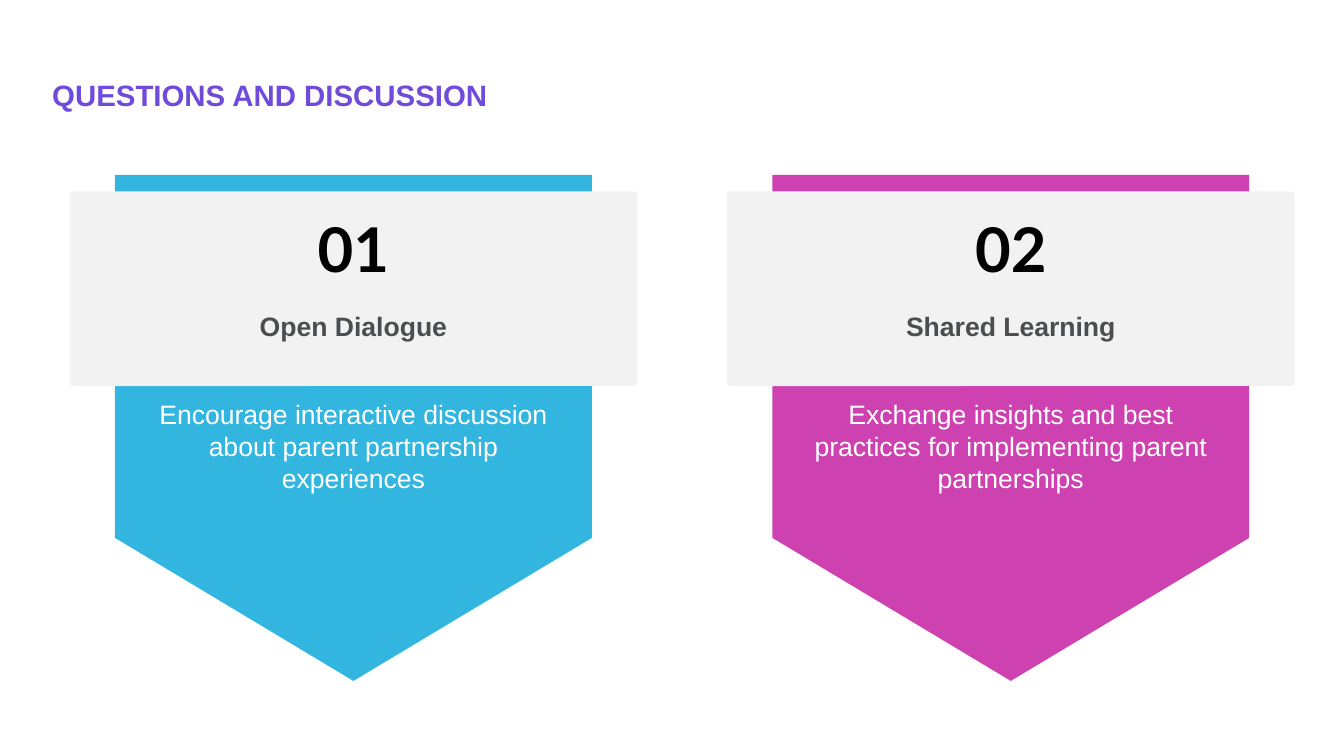
from pptx import Presentation
from pptx.dml.color import RGBColor
from pptx.enum.shapes import MSO_SHAPE
from pptx.enum.text import MSO_ANCHOR, PP_ALIGN
from pptx.util import Inches, Pt

PENTAGON = MSO_SHAPE.PENTAGON
ROUNDED = MSO_SHAPE.ROUNDED_RECTANGLE
TOP, BOTTOM = MSO_ANCHOR.TOP, MSO_ANCHOR.BOTTOM
LEFT, CENTER = PP_ALIGN.LEFT, PP_ALIGN.CENTER

BANNER_LEFT, BANNER_TOP, BANNER_WIDTH = 0.69, 1.73, 5.63
BANNER_PITCH = 6.52
BANNERS = [
    ("01", "Open Dialogue",
     "Encourage interactive discussion about parent partnership experiences",
     "32B5DF"),
    ("02", "Shared Learning",
     "Exchange insights and best practices for implementing parent partnerships",
     "CD41B0"),
]


def color(hex_value):
    """Return the colour for a hex string."""
    return RGBColor.from_string(hex_value)


def add_filled(slide, kind, box, fill, adjustment):
    """Add a flat preset shape without an outline."""
    shape = slide.shapes.add_shape(kind, *map(Inches, box))
    shape.shadow.inherit = False
    shape.fill.solid()
    shape.fill.fore_color.rgb = color(fill)
    shape.line.fill.background()
    shape.adjustments[0] = adjustment
    return shape


def add_text(slide, box, text, size, hex_value, bold=False, face="Arial",
             align=CENTER, anchor=TOP):
    """Add a wrapped one-paragraph text box."""
    frame = slide.shapes.add_textbox(*map(Inches, box)).text_frame
    frame.word_wrap = True
    frame.vertical_anchor = anchor
    paragraph = frame.paragraphs[0]
    paragraph.text = text
    paragraph.alignment = align
    font = paragraph.font
    font.name, font.size, font.bold = face, Pt(size), bold
    font.color.rgb = color(hex_value)


def add_banner(slide, left, top, width, number, heading, body, fill):
    """Draw a downward banner with a numbered label panel across it."""
    center = left + width / 2

    def centered(box_width, offset, height):
        return center - box_width / 2, top + offset, box_width, height

    arrow = add_filled(slide, PENTAGON, centered(5.02, 0.15, 4.73), fill, 0.3)
    arrow.rotation = 90
    add_filled(slide, ROUNDED, centered(width, 0.17, 1.93), "F2F2F2", 0.02)
    add_text(slide, centered(2.58, 0.31, 0.84), number, 44, "000000",
             bold=True, face="Lato")
    add_text(slide, centered(4.62, 1.3, 0.44), heading, 19, "4C4D4F", bold=True)
    add_text(slide, centered(4.48, 2.17, 2.78), body, 19, "FFFFFF")


def build_discussion_slide(prs):
    """Add the slide with its title and a row of banners."""
    slide = prs.slides.add_slide(prs.slide_layouts[6])
    for index, banner in enumerate(BANNERS):
        add_banner(slide, BANNER_LEFT + index * BANNER_PITCH, BANNER_TOP,
                   BANNER_WIDTH, *banner)
    add_text(slide, (0.42, 0.32, 12.47, 0.84), "QUESTIONS AND DISCUSSION", 21,
             "6F4BDC", bold=True, align=LEFT, anchor=BOTTOM)


def main():
    """Build and save the presentation."""
    prs = Presentation()
    prs.slide_width, prs.slide_height = Inches(13.33), Inches(7.5)
    build_discussion_slide(prs)
    prs.save("out.pptx")


if __name__ == "__main__":
    main()
